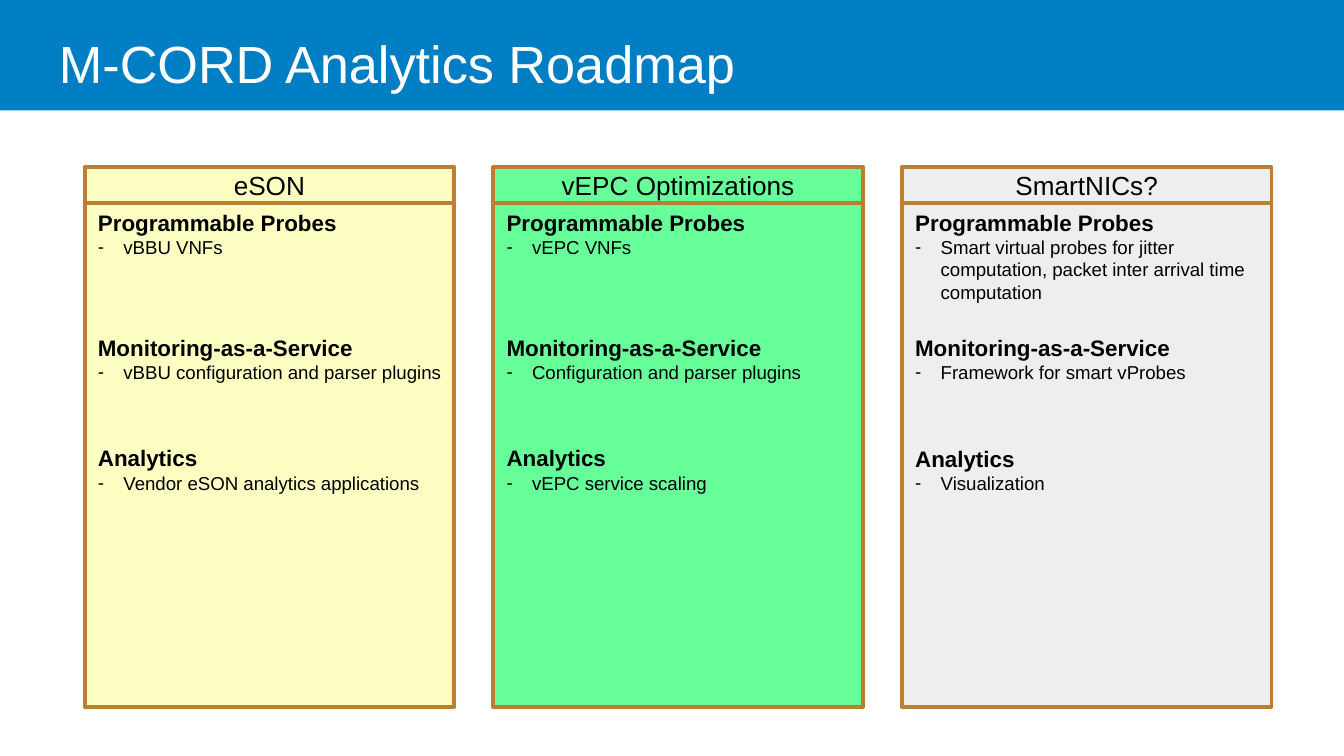
from dataclasses import dataclass

from pptx import Presentation
from pptx import util as u
from pptx.dml.color import RGBColor
from pptx.enum import shapes, text
from pptx.oxml.ns import qn
from lxml import etree

BLUE = RGBColor(0x00, 0x7E, 0xC4)
WHITE = RGBColor(0xFF, 0xFF, 0xFF)
BLACK = RGBColor(0x00, 0x00, 0x00)
BROWN = RGBColor(0xBD, 0x7F, 0x2F)
CREAM = RGBColor(0xFC, 0xFF, 0xC1)
GREEN = RGBColor(0x66, 0xFF, 0x99)
GRAY = RGBColor(0xEE, 0xEE, 0xEE)

FONT = "Arial"
LEFT, PITCH, WIDTH = 45.36, 218.9, 198
HEAD_TOP, HEAD_HIGH = 89.4, 19.2
BODY_TOP, BODY_HIGH = 108.3, 270.5
INDENT = 13.7
TOPICS = ("Programmable Probes", "Monitoring-as-a-Service", "Analytics")


@dataclass(frozen=True)
class Column:
    name: str
    fill: RGBColor
    items: tuple[str, str, str]
    gaps: tuple[float, float, float] = (0, 40.5, 33)


COLUMNS = (
    Column("eSON", CREAM, ("vBBU VNFs", "vBBU configuration and parser plugins",
                           "Vendor eSON analytics applications")),
    Column("vEPC Optimizations", GREEN, ("vEPC VNFs", "Configuration and parser plugins",
                                         "vEPC service scaling")),
    Column("SmartNICs?", GRAY, ("Smart virtual probes for jitter computation, "
                                "packet inter arrival time computation",
                                "Framework for smart vProbes", "Visualization"),
           (0, 16.5, 33)),
)


def add_run(para, words: str, size: float, color: RGBColor = BLACK, bold: bool = False) -> None:
    """Append one styled run to a paragraph."""
    run = para.add_run()
    run.text = words
    run.font.name = FONT
    run.font.size = u.Pt(size)
    run.font.bold = bold
    run.font.color.rgb = color


def add_box(slide, left: float, top: float, width: float, high: float, fill: RGBColor,
            line: RGBColor | None = None):
    """Draw a flat rectangle and return it."""
    box = slide.shapes.add_shape(shapes.MSO_SHAPE.RECTANGLE, u.Pt(left), u.Pt(top),
                                 u.Pt(width), u.Pt(high))
    box.shadow.inherit = False
    box.fill.solid()
    box.fill.fore_color.rgb = fill
    if line is None:
        box.line.fill.background()
    else:
        box.line.color.rgb = line
        box.line.width = u.Pt(2)
    return box


def add_dash(para) -> None:
    """Give a paragraph a hanging dash bullet."""
    props = para._p.get_or_add_pPr()
    props.set("marL", str(u.Pt(INDENT)))
    props.set("indent", str(-u.Pt(INDENT)))
    etree.SubElement(props, qn("a:buFont"), typeface=FONT)
    etree.SubElement(props, qn("a:buChar"), char="-")


def add_title(slide) -> None:
    """Draw the banner and its title."""
    add_box(slide, 0, 0, 720, 59.2, BLUE)
    box = slide.shapes.add_textbox(u.Pt(24.5), u.Pt(7.2), u.Pt(671), u.Pt(45.4))
    frame = box.text_frame
    frame.word_wrap = True
    frame.margin_top = u.Pt(9.5)
    add_run(frame.paragraphs[0], "M-CORD Analytics Roadmap", 28, WHITE)


def add_column(slide, col: Column, left: float) -> None:
    """Draw one column with its body and header."""
    frame = add_box(slide, left, BODY_TOP, WIDTH, BODY_HIGH, col.fill, BROWN).text_frame
    frame.word_wrap = True
    frame.vertical_anchor = text.MSO_ANCHOR.TOP
    frame.margin_right = u.Pt(5)
    for order, (topic, item, gap) in enumerate(zip(TOPICS, col.items, col.gaps)):
        para = frame.add_paragraph() if order else frame.paragraphs[0]
        para.alignment = text.PP_ALIGN.LEFT
        if gap:
            para.space_before = u.Pt(gap)
        add_run(para, topic, 12, bold=True)
        para = frame.add_paragraph()
        para.alignment = text.PP_ALIGN.LEFT
        add_dash(para)
        add_run(para, item, 10)

    frame = add_box(slide, left, HEAD_TOP, WIDTH, HEAD_HIGH, col.fill, BROWN).text_frame
    frame.vertical_anchor = text.MSO_ANCHOR.MIDDLE
    para = frame.paragraphs[0]
    para.alignment = text.PP_ALIGN.CENTER
    add_run(para, col.name, 14)


def main() -> None:
    """Build and save the slide."""
    deck = Presentation()
    deck.slide_width, deck.slide_height = u.Pt(720), u.Pt(405)
    slide = deck.slides.add_slide(deck.slide_layouts[6])
    add_title(slide)
    for order, col in enumerate(COLUMNS):
        add_column(slide, col, LEFT + order * PITCH)
    deck.save("out.pptx")


if __name__ == "__main__":
    main()
